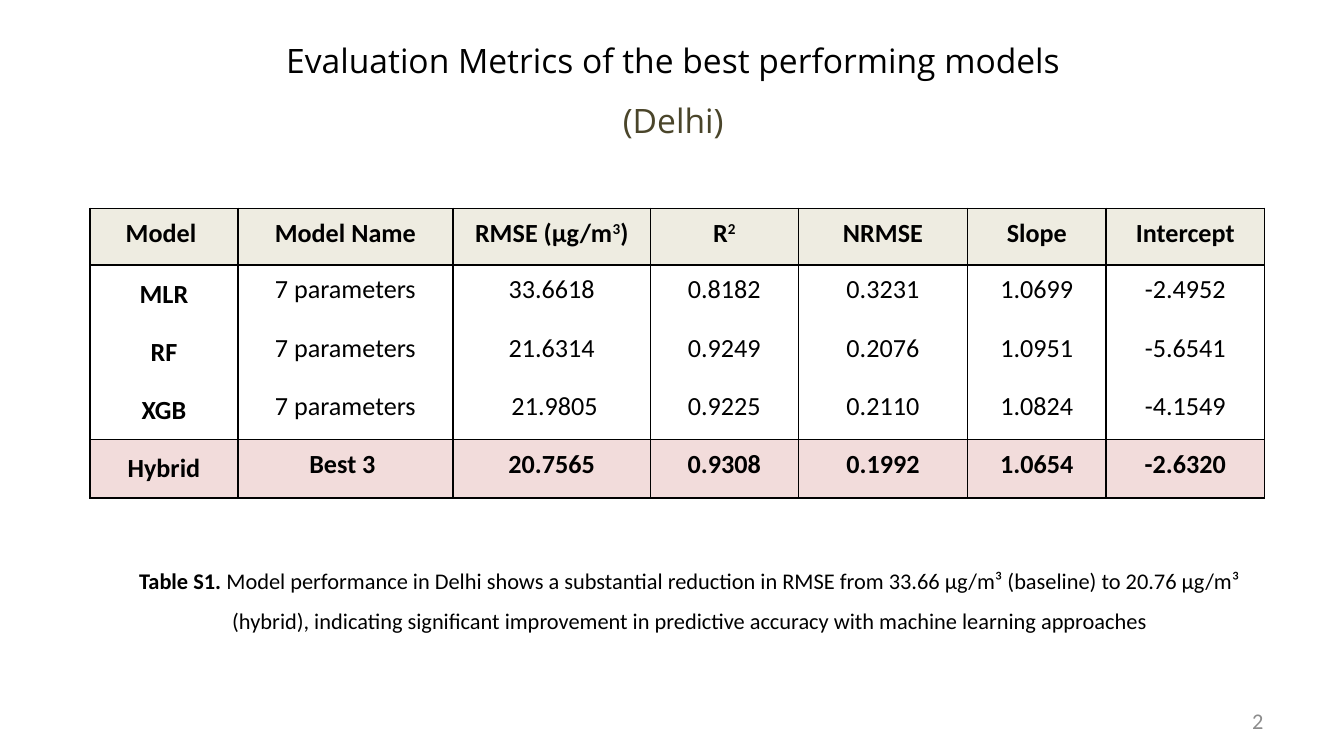
from dataclasses import dataclass

from lxml import etree
from pptx import Presentation
from pptx import util as u
from pptx.dml.color import RGBColor
from pptx.enum import text as t
from pptx.oxml.ns import qn


@dataclass(frozen=True)
class Theme:
    ink: str = "000000"
    olive: str = "4A452A"
    gray: str = "8C8C8C"
    header: str = "EEECE1"
    highlight: str = "F2DCDB"
    body_font: str = "Calibri"
    title_font: str = "Open Sans"
    title_size: int = 18
    table_size: int = 14
    small_size: int = 12
    rule: float = 1
    leading: float = 1.5


@dataclass(frozen=True)
class Span:
    text: str
    bold: bool = False
    color: str = Theme.ink
    superscript: bool = False


@dataclass(frozen=True)
class Area:
    """Left, top, width and height in inches."""
    left: float
    top: float
    width: float
    height: float

    def emu(self) -> list[int]:
        return [u.Inches(v) for v in (self.left, self.top, self.width, self.height)]


THEME = Theme()
WIDTH = 10
HEIGHT = WIDTH * 9 / 16

# Table grid
COLUMNS = [1.1, 1.6, 1.47, 1.1, 1.26, 1.03, 1.18]
ROW_HEIGHT = 0.42
HEADER = [
    [Span("Model ", True)],
    [Span("Model Name", True)],
    [Span("RMSE (µg/m", True), Span("3", True, superscript=True), Span(")", True)],
    [Span("R", True), Span("2", True, superscript=True)],
    [Span("NRMSE", True)],
    [Span("Slope", True)],
    [Span("Intercept", True)],
]
RESULTS = [
    ["MLR", "7 parameters", "33.6618", "0.8182", "0.3231", "1.0699", "-2.4952"],
    ["RF", "7 parameters", "21.6314", "0.9249", "0.2076", "1.0951", "-5.6541"],
    ["XGB", "7 parameters", " 21.9805", "0.9225", "0.2110", "1.0824", "-4.1549"],
    ["Hybrid", "Best 3 ", "20.7565", "0.9308", "0.1992", "1.0654", "-2.6320"],
]


def write(para, spans: list[Span], size: float, font: str, align) -> None:
    para.alignment = align
    for item in spans:
        for part, line in enumerate(item.text.split("\n")):
            if part:
                para.add_line_break()
            if not line:
                continue
            span = para.add_run()
            span.text = line
            span.font.size = u.Pt(size)
            span.font.name = font
            span.font.bold = item.bold
            span.font.color.rgb = RGBColor.from_string(item.color)
            if item.superscript:
                span._r.get_or_add_rPr().set("baseline", "30000")


def add_text(page, area: Area, spans: list[Span], size: float, font: str,
             align=t.PP_ALIGN.CENTER, anchor=t.MSO_ANCHOR.MIDDLE,
             spacing: float = 1.0) -> None:
    box = page.shapes.add_textbox(*area.emu())
    frame = box.text_frame
    frame.word_wrap = True
    frame.vertical_anchor = anchor
    para = frame.paragraphs[0]
    para.line_spacing = spacing
    write(para, spans, size, font, align)


def set_borders(cell, sides: str) -> None:
    properties = cell._tc.get_or_add_tcPr()
    for side in "LRTB":
        line = etree.SubElement(properties, qn(f"a:ln{side}"), w=str(u.Pt(THEME.rule)))
        if side in sides:
            fill = etree.SubElement(line, qn("a:solidFill"))
            etree.SubElement(fill, qn("a:srgbClr"), val=THEME.ink)
        else:
            etree.SubElement(line, qn("a:noFill"))


def fill_cell(cell, spans: list[Span], margin: float, sides: str, fill: str | None) -> None:
    cell.margin_left = cell.margin_right = u.Inches(margin)
    cell.margin_top = cell.margin_bottom = u.Inches(margin)
    set_borders(cell, sides)
    if fill:
        cell.fill.solid()
        cell.fill.fore_color.rgb = RGBColor.from_string(fill)
    else:
        cell.fill.background()
    write(cell.text_frame.paragraphs[0], spans, THEME.table_size, THEME.body_font,
          t.PP_ALIGN.CENTER)


def add_metrics(page, left: float, top: float) -> None:
    last = len(RESULTS)
    area = Area(left, top, sum(COLUMNS), ROW_HEIGHT * (last + 1))
    table = page.shapes.add_table(last + 1, len(COLUMNS), *area.emu()).table
    table.first_row = table.horz_banding = False
    for column, width in zip(table.columns, COLUMNS):
        column.width = u.Inches(width)
    for row in table.rows:
        row.height = u.Inches(ROW_HEIGHT)

    for col, spans in enumerate(HEADER):
        fill_cell(table.cell(0, col), spans, 0.07, "LRTB", THEME.header)
    # The baseline models form one group without inner horizontal rules
    for row, values in enumerate(RESULTS, start=1):
        best = row == last
        sides = "LR" + ("T" if row in (1, last) else "") + ("B" if row >= last - 1 else "")
        for col, value in enumerate(values):
            fill_cell(table.cell(row, col), [Span(value, best or col == 0)],
                      0.1 if col == 0 else 0.07, sides,
                      THEME.highlight if best else None)


def main() -> None:
    deck = Presentation()
    deck.slide_width, deck.slide_height = u.Inches(WIDTH), u.Inches(HEIGHT)
    page = deck.slides.add_slide(deck.slide_layouts[6])

    # Title
    add_text(page, Area(0.51, 0.24, 9, 0.71),
             [Span("Evaluation Metrics of the best performing models\n"),
              Span("(Delhi)", color=THEME.olive)],
             THEME.title_size, THEME.title_font, spacing=THEME.leading)

    # Page number
    add_text(page, Area(7.17, 5.21, 2.33, 0.3), [Span("2", color=THEME.gray)],
             THEME.small_size, THEME.body_font, align=t.PP_ALIGN.RIGHT)

    # Metrics table
    add_metrics(page, 0.67, 1.55)

    # Caption
    add_text(page, Area(0.92, 4.07, 8.43, 0.68),
             [Span("Table S1. ", True),
              Span("Model performance in Delhi shows a substantial reduction in RMSE "
                   "from 33.66 µg/m³ (baseline) to 20.76 µg/m³ (hybrid), indicating "
                   "significant improvement in predictive accuracy with machine "
                   "learning approaches")],
             THEME.small_size, THEME.body_font, anchor=t.MSO_ANCHOR.TOP,
             spacing=THEME.leading)

    deck.save("out.pptx")


if __name__ == "__main__":
    main()
